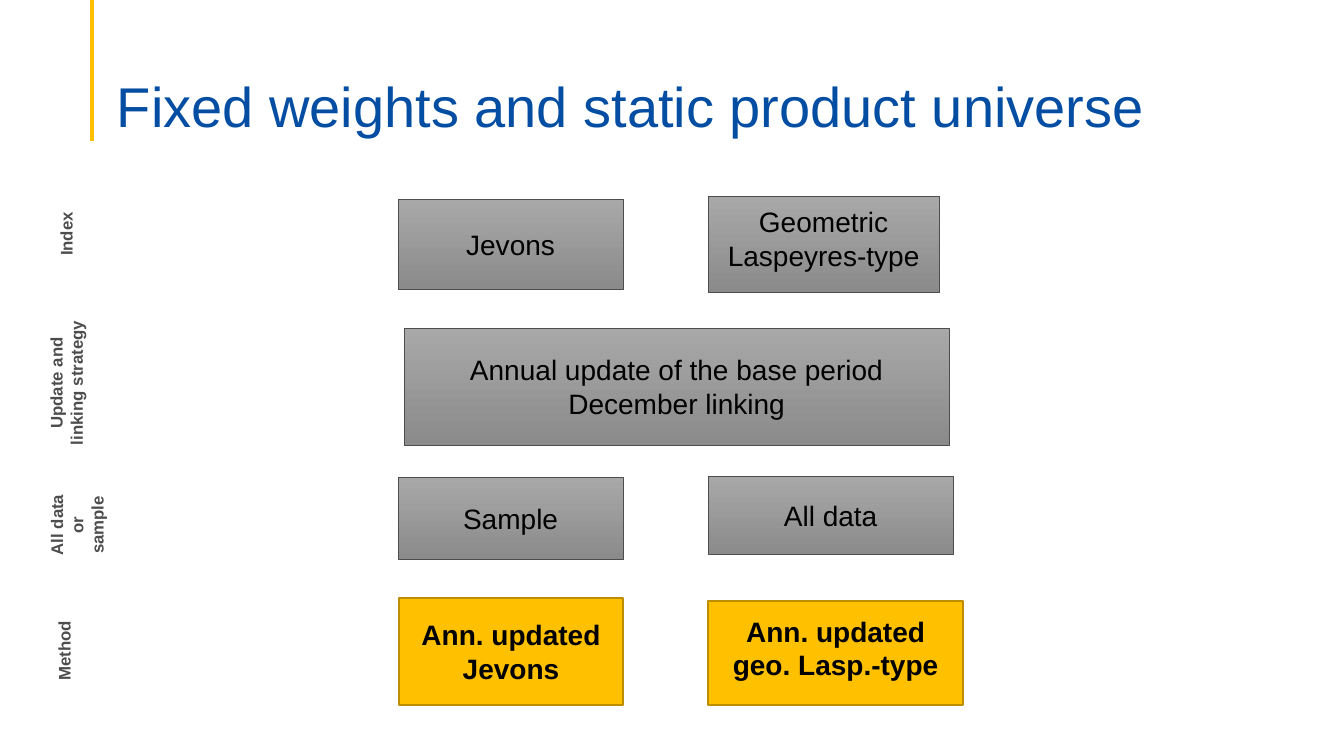
from pptx import Presentation
from pptx import util as u
from pptx.dml.color import RGBColor
from pptx.enum import shapes, text
from pptx.oxml.ns import qn

PX = 914400 / 100.8
FONT = "Arial"
BLUE = RGBColor(0x03, 0x4E, 0xA2)
GOLD = RGBColor(0xFF, 0xC0, 0x00)
DARK_GOLD = RGBColor(0xBD, 0x8E, 0x00)
LIGHT_GREY = RGBColor(0xA8, 0xA8, 0xA8)
MID_GREY = RGBColor(0x8B, 0x8B, 0x8B)
DARK_GREY = RGBColor(0x4D, 0x4D, 0x4D)
BLACK = RGBColor(0, 0, 0)

LABELS = [
    (31, 219, 70, 30, "Index"),
    (-10, 358, 152, 50, "Update and linking strategy"),
    (18, 500, 97, 50, "All data or\nsample"),
    (33, 626, 82, 50, "Method"),
]
STEPS = [
    (398, 199, 225, 90, "Jevons", 0),
    (708, 196, 231, 96, "Geometric\nLaspeyres-type", 12),
    (404, 328, 545, 117, "Annual update of the base period\nDecember linking", 0),
    (398, 477, 225, 82, "Sample", 0),
    (708, 476, 245, 78, "All data", 0),
]
METHODS = [
    (399, 598, 224, 107, "Ann. updated Jevons", 0),
    (708, 601, 255, 104, "Ann. updated geo. Lasp.-type", 10),
]


def px(*lengths):
    """Turn pixel lengths into EMU."""
    return [u.Emu(round(length * PX)) for length in lengths]


def write(box, words, size, color, bold=False, align=text.PP_ALIGN.CENTER):
    """Fill a shape with text and format every run."""
    frame = box.text_frame
    frame.word_wrap = True
    frame.text = words
    for para in frame.paragraphs:
        para.alignment = align
        for span in para.runs:
            span.font.name = FONT
            span.font.size = u.Pt(size)
            span.font.bold = bold
            span.font.color.rgb = color
    return frame


def add_title(page, words):
    """Add the slide title and the gold rule beside it."""
    rule = page.shapes.add_connector(shapes.MSO_CONNECTOR.STRAIGHT, *px(92, 0, 92, 141))
    rule.line.color.rgb = GOLD
    rule.line.width = u.Pt(2.25)
    properties = rule._element.spPr
    properties.append(properties.makeelement(qn("a:effectLst"), {}))
    box = page.shapes.add_textbox(*px(107, 53, 1159, 87))
    frame = write(box, words, 40, BLUE, align=text.PP_ALIGN.LEFT)
    frame.vertical_anchor = text.MSO_ANCHOR.BOTTOM
    frame.margin_bottom = 0
    frame.paragraphs[0].line_spacing = 0.9


def add_label(page, left, top, width, height, words):
    """Add a row label that reads upwards."""
    box = page.shapes.add_textbox(*px(left, top, width, height))
    box.rotation = 270
    write(box, words, 12, DARK_GREY, bold=True)


def add_box(page, left, top, width, height, words, lift, bold=False):
    """Add an outlined rectangle whose centred text may be lifted."""
    box = page.shapes.add_shape(
        shapes.MSO_SHAPE.RECTANGLE, *px(left, top, width, height))
    box.shadow.inherit = False
    frame = write(box, words, 20, BLACK, bold)
    frame.vertical_anchor = text.MSO_ANCHOR.MIDDLE
    frame.margin_bottom = px(5 + lift)[0]
    return box


def add_step(page, *place):
    """Add a grey box with a vertical gradient."""
    box = add_box(page, *place)
    box.fill.gradient()
    box.fill.gradient_angle = 270
    for stop, color in zip(box.fill.gradient_stops, (LIGHT_GREY, MID_GREY)):
        stop.color.rgb = color
    box.line.color.rgb = DARK_GREY
    box.line.width = u.Pt(0.5)


def add_method(page, *place):
    """Add a gold box naming the resulting method."""
    box = add_box(page, *place, bold=True)
    box.fill.solid()
    box.fill.fore_color.rgb = GOLD
    box.line.color.rgb = DARK_GOLD
    box.line.width = u.Pt(1)


def main():
    """Build the slide and save it."""
    deck = Presentation()
    deck.slide_width, deck.slide_height = u.Inches(13.33), u.Inches(7.5)
    page = deck.slides.add_slide(deck.slide_layouts[6])
    add_title(page, "Fixed weights and static product universe")
    for add, rows in ((add_label, LABELS), (add_step, STEPS), (add_method, METHODS)):
        for row in rows:
            add(page, *row)
    deck.save("out.pptx")


if __name__ == "__main__":
    main()
